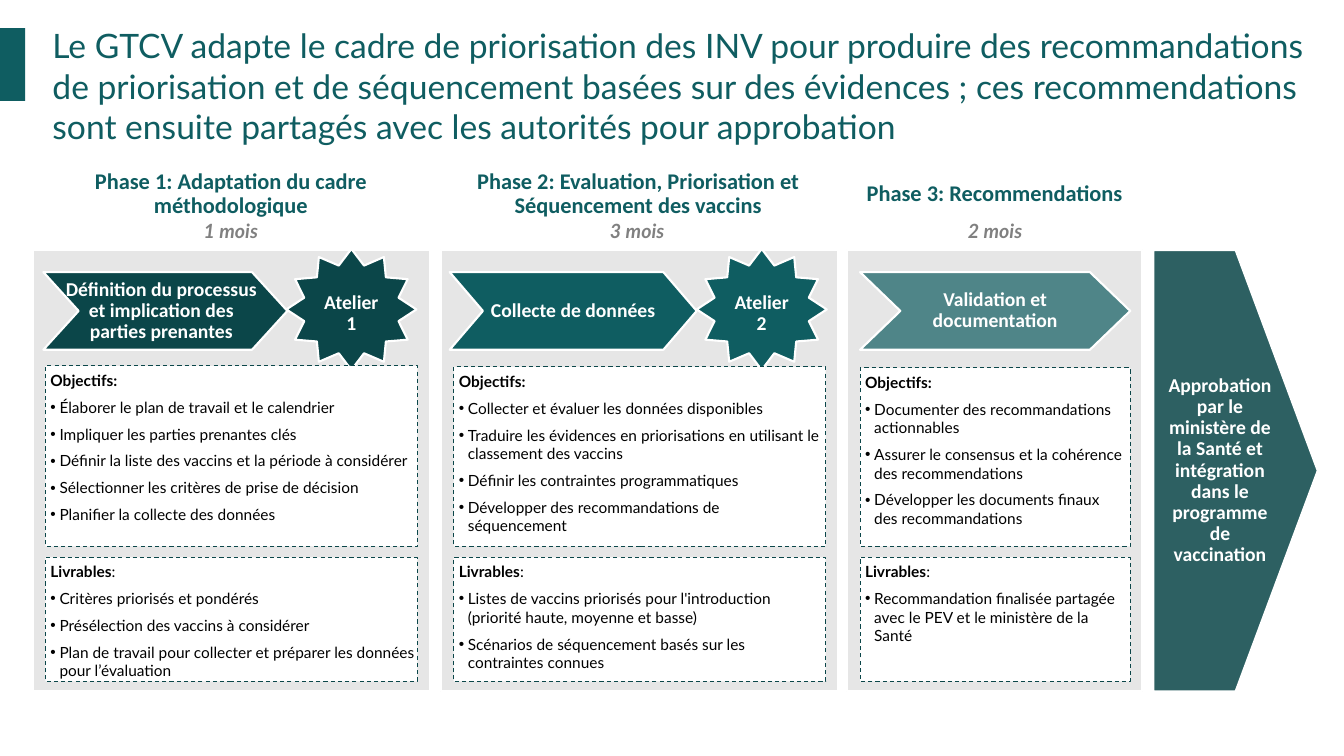
"""Build the slide on the three phases of vaccine prioritisation and their approval."""
from lxml.etree import SubElement
from pptx import Presentation
from pptx.dml.color import RGBColor
from pptx.enum.dml import MSO_LINE
from pptx.enum.shapes import MSO_SHAPE
from pptx.enum.text import MSO_ANCHOR, PP_ALIGN
from pptx.oxml.ns import qn
from pptx.util import Inches, Pt

COLORS = {"teal": "0F5D61", "dark": "0B4649", "panel": "E6E6E6",
          "white": "FFFFFF", "black": "000000", "grey": "808080"}

PHASES = [
    {"title": "Phase 1: Adaptation du cadre méthodologique", "title_at": (0.32, 3.94),
     "duration": "1 mois", "duration_left": 0.92, "panel": (0.33, 3.94),
     "step": "Définition du processus et implication des parties prenantes",
     "arrow": (0.43, 2.42, 0.35), "arrow_insets": (0.16, 0.03, 0.24, 0.03),
     "color": "dark", "opacity": 100, "workshop": ("Atelier\n1", 2.84),
     "box": (0.45, 3.69), "goals_top": 3.63, "right_inset": 0,
     "goals": ["Élaborer le plan de travail et le calendrier",
               "Impliquer les parties prenantes clés",
               "Définir la liste des vaccins et la période à considérer",
               "Sélectionner les critères de prise de décision",
               "Planifier la collecte des données"],
     "outputs": ["Critères priorisés et pondérés",
                 "Présélection des vaccins à considérer",
                 "Plan de travail pour collecter et préparer les données pour l’évaluation"]},
    {"title": "Phase 2: Evaluation, Priorisation et Séquencement des vaccins",
     "title_at": (4.36, 3.94), "duration": "3 mois", "duration_left": 4.95,
     "panel": (4.37, 3.94), "step": "Collecte de données",
     "arrow": (4.46, 2.45, 0.33), "arrow_insets": (0.3, 0.03, 0.3, 0.03),
     "color": "teal", "opacity": 100, "workshop": ("Atelier\n2", 6.91),
     "box": (4.5, 3.69), "goals_top": 3.64, "right_inset": 0.05,
     "goals": ["Collecter et évaluer les données disponibles",
               "Traduire les évidences en priorisations en utilisant le classement des vaccins",
               "Définir les contraintes programmatiques",
               "Développer des recommandations de séquencement"],
     "outputs": ["Listes de vaccins priorisés pour l'introduction (priorité haute, moyenne et basse)",
                 "Scénarios de séquencement basés sur les contraintes connues"]},
    {"title": "Phase 3: Recommendations", "title_at": (8.21, 3.31),
     "duration": "2 mois", "duration_left": 8.5, "panel": (8.4, 2.93),
     "step": "Validation et documentation",
     "arrow": (8.53, 2.68, 0.4), "arrow_insets": (0.3, 0.03, 0.3, 0.03),
     "color": "teal", "opacity": 70, "workshop": None,
     "box": (8.53, 2.68), "goals_top": 3.65, "right_inset": 0.05,
     "goals": ["Documenter des recommandations actionnables",
               "Assurer le consensus et la cohérence des recommendations",
               "Développer les documents finaux des recommandations"],
     "outputs": ["Recommandation finalisée partagée avec le PEV et le ministère de la Santé"]},
]
PANEL_TOP, PANEL_HEIGHT = 2.48, 4.38
ARROW_TOP, ARROW_HEIGHT = 2.7, 0.77
GOALS_BOTTOM = 5.42


def paint(shape, fill, line="white", width=1.5, opacity=100):
    """Fill and outline a shape, without shadow."""
    shape.shadow.inherit = False
    shape.fill.solid()
    shape.fill.fore_color.rgb = RGBColor.from_string(COLORS[fill])
    if opacity < 100:
        color = shape.fill._xPr.find(qn("a:solidFill"))[0]
        SubElement(color, qn("a:alpha"), val=str(opacity * 1000))
    if line:
        shape.line.color.rgb = RGBColor.from_string(COLORS[line])
        shape.line.width = Pt(width)
    else:
        shape.line.fill.background()


def write(shape, text, size, color, font="Calibri", insets=(0, 0, 0, 0), bold=True,
          align=PP_ALIGN.CENTER, anchor=MSO_ANCHOR.MIDDLE, spacing=0.9, wrap=True):
    """Set and format the text of a shape."""
    frame = shape.text_frame
    frame.word_wrap = wrap
    frame.vertical_anchor = anchor
    frame.margin_left, frame.margin_top, frame.margin_right, frame.margin_bottom = map(Inches, insets)
    frame.text = text
    for paragraph in frame.paragraphs:
        paragraph.alignment = align
        paragraph.line_spacing = spacing
        for run in paragraph.runs:
            run.font.size = Pt(size)
            run.font.name = font
            run.font.bold = bold
            run.font.color.rgb = RGBColor.from_string(COLORS[color])


prs = Presentation()
prs.slide_width, prs.slide_height = Inches(13.33), Inches(7.5)
slide = prs.slides.add_slide(prs.slide_layouts[6])
shapes = slide.shapes

accent = shapes.add_shape(MSO_SHAPE.RECTANGLE, Inches(-0.01), Inches(0.28), Inches(0.26), Inches(0.72))
paint(accent, "teal", line=None)

headline = shapes.add_textbox(Inches(0.52), Inches(0.25), Inches(12.55), Inches(0.8))
write(headline, "Le GTCV adapte le cadre de priorisation des INV pour produire des recommandations "
      "de priorisation et de séquencement basées sur des évidences ; ces recommendations sont "
      "ensuite partagés avec les autorités pour approbation",
      24, "teal", "Lato", bold=False, align=PP_ALIGN.LEFT, anchor=MSO_ANCHOR.TOP, spacing=1.0)

for phase in PHASES:
    left, width = phase["panel"]
    panel = shapes.add_shape(MSO_SHAPE.RECTANGLE, Inches(left), Inches(PANEL_TOP),
                             Inches(width), Inches(PANEL_HEIGHT))
    paint(panel, "panel")

    left, width = phase["title_at"]
    phase_title = shapes.add_textbox(Inches(left), Inches(1.67), Inches(width), Inches(0.51))
    write(phase_title, phase["title"], 16, "teal", insets=(0.3, 0.03, 0.3, 0.03))

    duration = shapes.add_textbox(Inches(phase["duration_left"]), Inches(2.12), Inches(2.74), Inches(0.29))
    write(duration, phase["duration"], 14, "grey", "Lato", (0.1, 0.05, 0.1, 0.05),
          anchor=MSO_ANCHOR.TOP, spacing=1.0)
    duration.text_frame.paragraphs[0].runs[0].font.italic = True

    left, width, tip = phase["arrow"]
    right, middle, bottom = left + width, ARROW_TOP + ARROW_HEIGHT / 2, ARROW_TOP + ARROW_HEIGHT
    outline = shapes.build_freeform(Inches(left), Inches(ARROW_TOP))
    corners = [(right - tip, ARROW_TOP), (right, middle), (right - tip, bottom),
               (left, bottom), (left + tip, middle)]
    outline.add_line_segments([(Inches(x), Inches(y)) for x, y in corners], close=True)
    step = outline.convert_to_shape()
    paint(step, phase["color"], opacity=phase["opacity"])
    write(step, phase["step"], 14, "white", insets=phase["arrow_insets"])

    if phase["workshop"]:
        label, left = phase["workshop"]
        workshop = shapes.add_shape(MSO_SHAPE.STAR_12_POINT, Inches(left), Inches(2.47),
                                    Inches(1.29), Inches(1.2))
        paint(workshop, phase["color"])
        write(workshop, label, 14, "white", insets=(0, 0.09, 0, 0), wrap=False)

    left, width = phase["box"]
    goals_height = GOALS_BOTTOM - phase["goals_top"]
    for heading, items, top, height, right_inset in (
            ("Objectifs:", phase["goals"], phase["goals_top"], goals_height, 0.05),
            ("Livrables", phase["outputs"], 5.53, 1.23, phase["right_inset"])):
        box = shapes.add_shape(MSO_SHAPE.RECTANGLE, Inches(left), Inches(top), Inches(width), Inches(height))
        paint(box, "white", "dark", 0.75)
        box.line.dash_style = MSO_LINE.DASH
        write(box, "\n".join([heading, *items]), 11, "black", "Lato", (0.05, 0.05, right_inset, 0.05),
              bold=False, align=PP_ALIGN.LEFT, anchor=MSO_ANCHOR.TOP, spacing=1.0)
        first, *bullets = box.text_frame.paragraphs
        first.space_before = Pt(6)
        first.runs[0].font.bold = True
        if heading == "Livrables":
            colon = first.add_run()
            colon.text = ":"
            colon.font.size, colon.font.name, colon.font.bold = Pt(11), "Lato", False
            colon.font.color.rgb = RGBColor.from_string(COLORS["black"])
        for bullet in bullets:
            bullet.space_before = Pt(6)
            properties = bullet._p.get_or_add_pPr()
            properties.set("marL", str(Inches(0.09)))
            properties.set("indent", str(Inches(-0.09)))
            SubElement(properties, qn("a:buFont"), typeface="Arial")
            SubElement(properties, qn("a:buChar"), char="•")

approval = shapes.add_shape(MSO_SHAPE.PENTAGON, Inches(11.44), Inches(PANEL_TOP),
                            Inches(1.63), Inches(PANEL_HEIGHT))
paint(approval, "dark", opacity=86)
write(approval, "Approbation par le ministère de la Santé et intégration dans le programme de vaccination",
      14, "white", insets=(0.1, 0, 0, 0))

prs.save("out.pptx")
